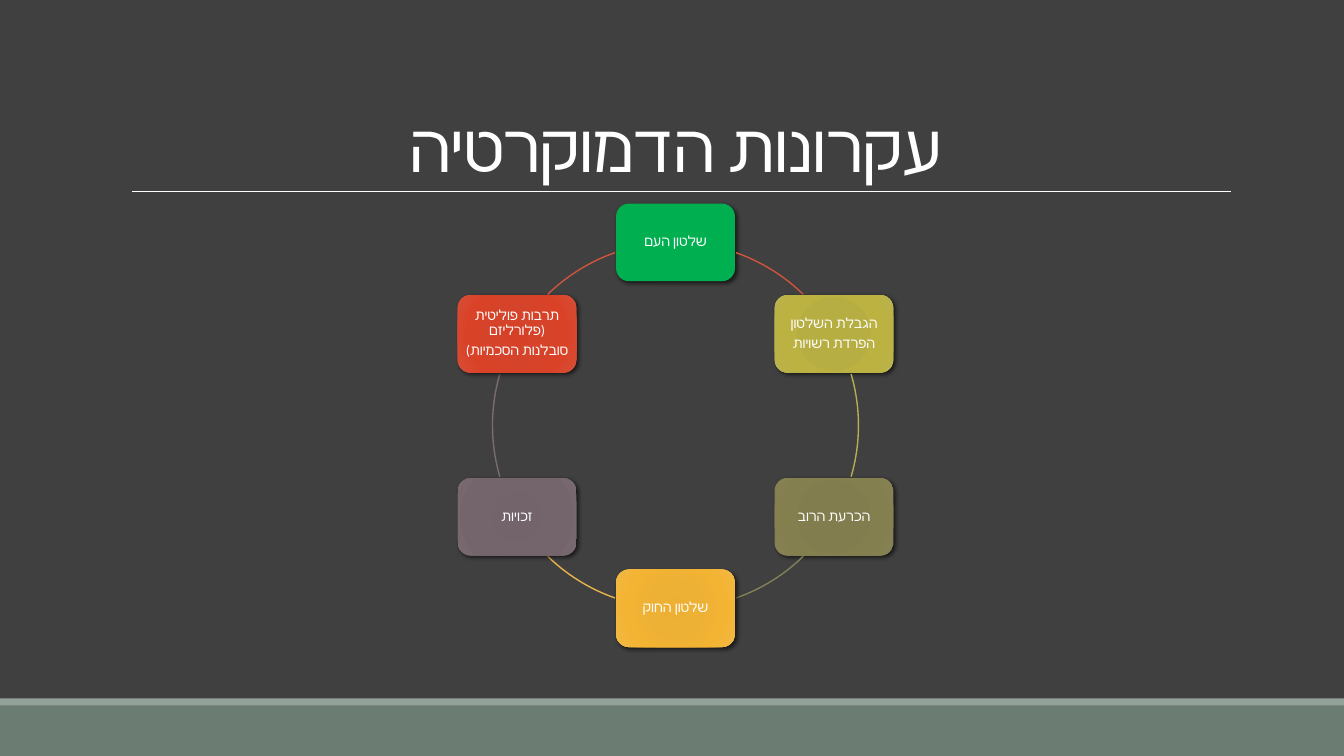
import math

from lxml import etree
from pptx import Presentation
from pptx import util as u
from pptx.dml.color import RGBColor
from pptx.enum import shapes, text
from pptx.oxml.ns import qn

WIDTH, HEIGHT = 13.33, 7.5
FONT = "Calibri"
COLORS = {
    "background": "404040", "band": "6B7D72", "stripe": "93A299",
    "text": "FFFFFF", "shadow": "000000",
}
STOPS = (0, 34, 70, 100)
PRINCIPLES = [
    (["שלטון העם"], ["00B050"], "CF543F"),
    (["הגבלת השלטון", "הפרדת רשויות"], ["B6AE40", "B6AE43", "BBB241", "BAB24E"], "B5AE53"),
    (["הכרעת הרוב"], ["817C4C", "817D4E", "847F4E", "868256"], "848058"),
    (["שלטון החוק"], ["EEB032", "EDB136", "F4B433", "F0B845"], "E8B54D"),
    (["זכויות"], ["716369", "72646A", "74656C", "796B71"], "786C71"),
    (["תרבות פוליטית (פלורליזם", "סובלנות הסכמיות)"],
     ["D54027", "D4432A", "DA4228", "D64F38"], "CF543F"),
]
NODE_WIDTH, NODE_HEIGHT = 1.18, 0.77
ARC_SPANS = [(19.3, 44.3), (73.7, 106.3), (135.7, 160.7)]


def rgb(color):
    """Turn a hex string into a colour."""
    return RGBColor.from_string(color)


def add_element(parent, tag, **attributes):
    """Append a drawing element with the given attributes."""
    element = etree.SubElement(parent, qn(tag))
    for name, value in attributes.items():
        element.set(name, str(value))
    return element


def add_color(parent, color):
    """Append a colour element."""
    return add_element(parent, "a:srgbClr", val=color)


def add_plain_shape(page, kind, box):
    """Place a preset shape without outline or shadow."""
    shape = page.shapes.add_shape(kind, *(u.Inches(length) for length in box))
    shape.shadow.inherit = False
    shape.line.fill.background()
    return shape


def fill_radial(shape, colors):
    """Fill a shape with a circular gradient."""
    shape.fill.background()
    empty = shape._element.spPr.find(qn("a:noFill"))
    gradient = etree.Element(qn("a:gradFill"))
    stops = add_element(gradient, "a:gsLst")
    for position, color in zip(STOPS, colors):
        add_color(add_element(stops, "a:gs", pos=position * 1000), color)
    circle = add_element(gradient, "a:path", path="circle")
    add_element(circle, "a:fillToRect", l=100000, t=100000, r=100000, b=100000)
    empty.getparent().replace(empty, gradient)


def add_shadow(shape):
    """Give a shape a soft shadow to the lower right."""
    effects = shape._element.spPr.find(qn("a:effectLst"))
    shadow = add_element(effects, "a:outerShdw", blurRad=u.Pt(3), dist=u.Pt(2),
                         dir=45 * 60000, algn="ctr", rotWithShape=0)
    add_element(add_color(shadow, COLORS["shadow"]), "a:alpha", val=60000)


def format_text(frame, size, line_spacing):
    """Format centred right-to-left paragraphs."""
    for para in frame.paragraphs:
        para.alignment = text.PP_ALIGN.CENTER
        para.line_spacing = line_spacing
        para._p.get_or_add_pPr().set("rtl", "1")
        for span in para.runs:
            span.font.size = u.Pt(size)
            span.font.name = FONT
            span.font.color.rgb = rgb(COLORS["text"])
            add_element(span._r.get_or_add_rPr(), "a:cs", typeface=FONT)


def add_footer(page, box):
    """Draw the footer band with its stripe on top."""
    left, top, width, height = box
    stripe = 0.07
    for name, part in (("band", (left, top + stripe, width, height - stripe)),
                       ("stripe", (left, top, width, stripe))):
        shape = add_plain_shape(page, shapes.MSO_SHAPE.RECTANGLE, part)
        shape.fill.solid()
        shape.fill.fore_color.rgb = rgb(COLORS[name])


def add_title(page, box, wording):
    """Place the title and the rule beneath it."""
    left, top, width, height = box
    title = page.shapes.title
    title.left, title.top, title.width, title.height = (u.Inches(length) for length in box)
    frame = title.text_frame
    frame.text = wording
    frame.word_wrap = True
    frame.auto_size = text.MSO_AUTO_SIZE.NONE
    frame.vertical_anchor = text.MSO_ANCHOR.BOTTOM
    format_text(frame, 48, 0.85)
    frame.paragraphs[0].runs[0]._r.get_or_add_rPr().set("spc", "-50")
    bottom = u.Inches(top + height)
    rule = page.shapes.add_connector(shapes.MSO_CONNECTOR.STRAIGHT, u.Inches(left + 0.11),
                                     bottom, u.Inches(left + width + 0.01), bottom)
    rule.line.color.rgb = rgb(COLORS["text"])
    rule.line.width = u.Pt(0.5)
    add_element(rule._element.spPr, "a:effectLst")


def add_node(page, box, lines, colors):
    """Place one principle as a rounded box."""
    node = add_plain_shape(page, shapes.MSO_SHAPE.ROUNDED_RECTANGLE, box)
    if len(colors) > 1:
        fill_radial(node, colors)
    else:
        node.fill.solid()
        node.fill.fore_color.rgb = rgb(colors[0])
    add_shadow(node)
    frame = node.text_frame
    frame.text = "\n".join(lines)
    frame.word_wrap = True
    frame.vertical_anchor = text.MSO_ANCHOR.MIDDLE
    frame.margin_left = frame.margin_right = u.Inches(0.04)
    frame.margin_top = frame.margin_bottom = u.Inches(0.04)
    format_text(frame, 10, 0.9)
    for para in frame.paragraphs:
        para.space_after = u.Pt(3.5)


def add_arc(page, box, span, color):
    """Draw part of the ring between two clockwise angles from the top."""
    arc = add_plain_shape(page, shapes.MSO_SHAPE.ARC, box)
    for index, angle in enumerate(span):
        arc.adjustments[index] = (angle - 90) % 360 * 0.6
    arc.fill.background()
    arc.line.color.rgb = rgb(color)
    arc.line.width = u.Pt(1)


def add_cycle(page, box):
    """Arrange the principles evenly on a ring inside the box."""
    left, top, width, height = box
    center_x, center_y = left + width / 2, top + height / 2
    radius = (height - NODE_HEIGHT) / 2
    ring = (center_x - radius, center_y - radius, 2 * radius, 2 * radius)
    for index, (lines, colors, arc_color) in enumerate(PRINCIPLES):
        angle = 2 * math.pi * index / len(PRINCIPLES)
        node_left = center_x + radius * math.sin(angle) - NODE_WIDTH / 2
        node_top = center_y - radius * math.cos(angle) - NODE_HEIGHT / 2
        add_node(page, (node_left, node_top, NODE_WIDTH, NODE_HEIGHT), lines, colors)
        half, place = divmod(index, len(ARC_SPANS))
        span = [edge + 180 * half for edge in ARC_SPANS[place]]
        add_arc(page, ring, span, arc_color)


def main():
    """Build the slide and save it."""
    deck = Presentation()
    deck.slide_width, deck.slide_height = u.Inches(WIDTH), u.Inches(HEIGHT)
    page = deck.slides.add_slide(deck.slide_layouts[5])
    page.background.fill.solid()
    page.background.fill.fore_color.rgb = rgb(COLORS["background"])
    add_footer(page, (0, 6.93, WIDTH, HEIGHT - 6.93))
    add_title(page, (1.2, 0.31, 11, 1.59), "עקרונות הדמוקרטיה")
    add_cycle(page, (4.54, 2.02, 4.32, 4.4))
    deck.save("out.pptx")


if __name__ == "__main__":
    main()
